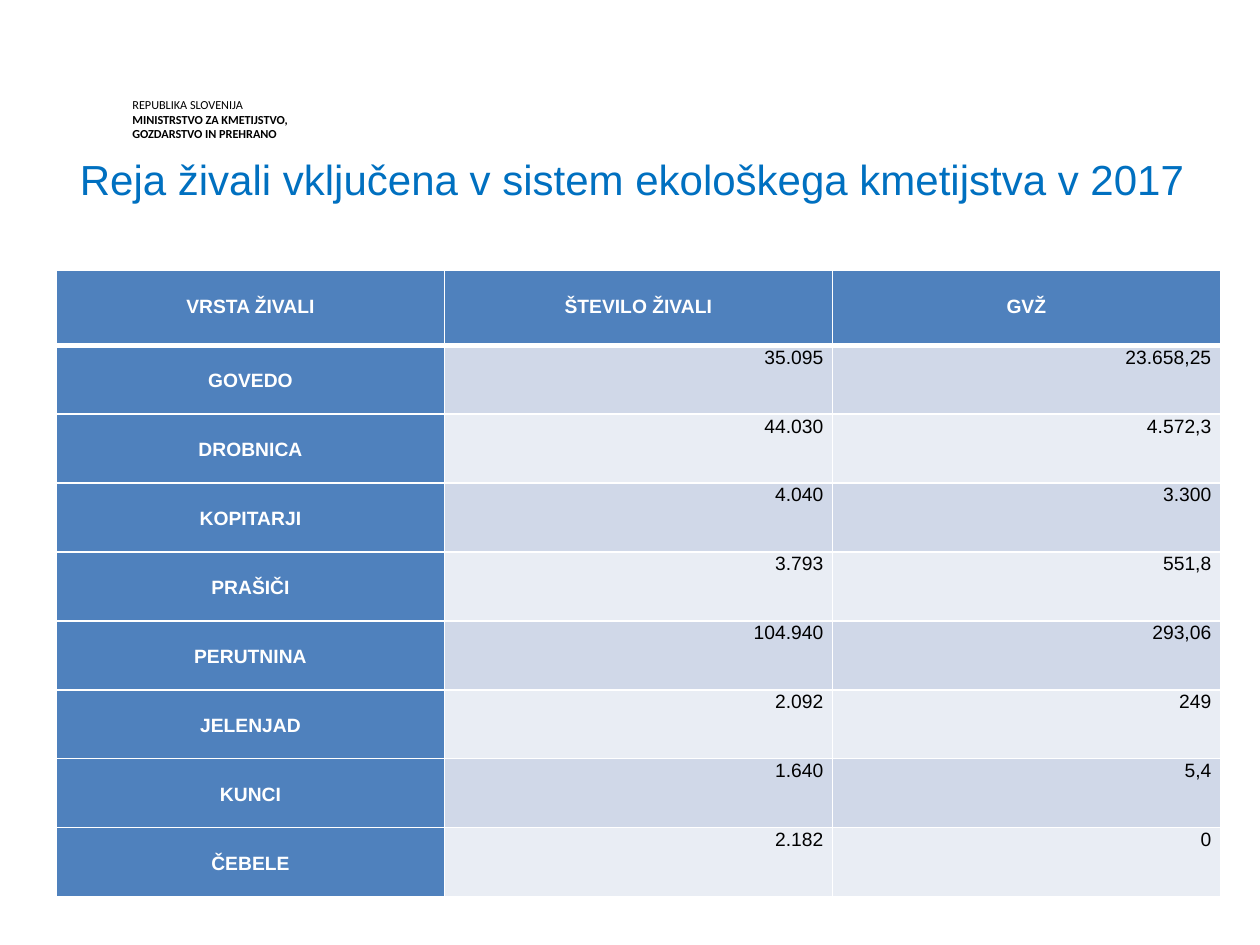
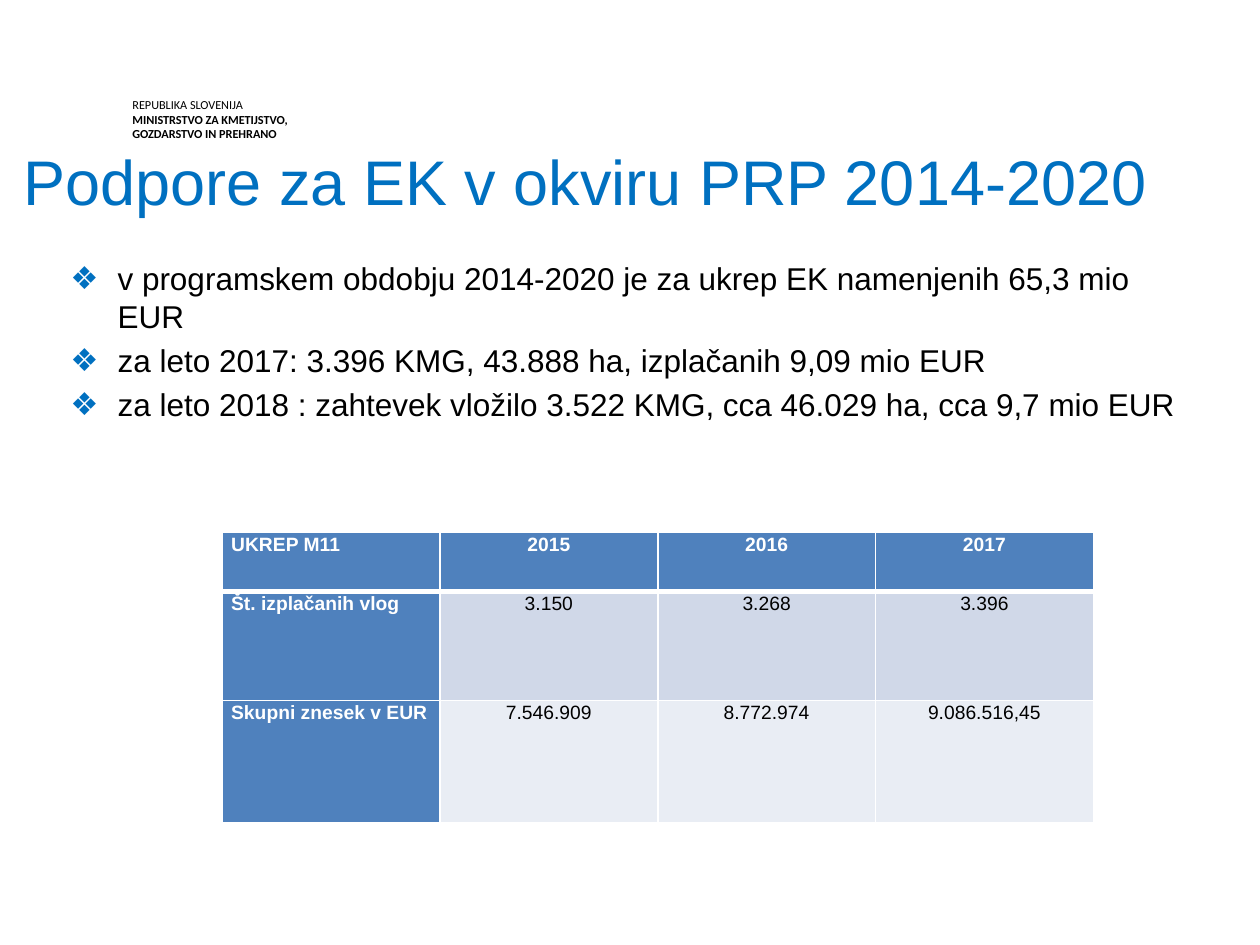
from dataclasses import dataclass

from lxml.etree import SubElement
from pptx import Presentation
from pptx.dml.color import RGBColor
from pptx.enum.text import MSO_ANCHOR, MSO_AUTO_SIZE, PP_ALIGN
from pptx.oxml.ns import qn
from pptx.util import Cm, Pt


@dataclass(frozen=True)
class Theme:
    blue: str = "0070C0"
    header: str = "4F81BD"
    bands: tuple = ("D0D8E8", "E9EDF4")
    white: str = "FFFFFF"
    black: str = "000000"
    font: str = "Arial"
    ministry_font: str = "Calibri"
    ministry_size: float = 7
    ministry_leading: float = 8.4
    body_size: float = 18
    table_size: float = 11
    table_leading: float = 1.07
    rule: float = 1
    header_rule: float = 3


TITLE_AND_CONTENT, TITLE_ONLY = 1, 5
MINISTRY = [
    ("REPUBLIKA SLOVENIJA", False),
    ("MINISTRSTVO ZA KMETIJSTVO,", True),
    ("GOZDARSTVO IN PREHRANO", True),
]


class Deck:
    def __init__(self, theme):
        self.theme = theme
        self.prs = Presentation()
        self.prs.slide_width, self.prs.slide_height = Cm(25.4), Cm(19.05)
        self.s = None

    def slide(self, layout):
        self.s = self.prs.slides.add_slide(self.prs.slide_layouts[layout])
        self.ministry()

    def run(self, p, text, size, color, bold=False, font=None):
        r = p.add_run()
        r.text = text
        r.font.name = font or self.theme.font
        r.font.size = Pt(size)
        r.font.bold = bold
        r.font.color.rgb = RGBColor.from_string(color)

    def frame(self, sp, box):
        """Place a shape and return its text frame, flush with the box and top aligned."""
        sp.left, sp.top, sp.width, sp.height = (Cm(v) for v in box)
        tf = sp.text_frame
        tf.margin_left = tf.margin_top = tf.margin_right = tf.margin_bottom = 0
        tf.vertical_anchor = MSO_ANCHOR.TOP
        tf.word_wrap = True
        tf.auto_size = MSO_AUTO_SIZE.NONE
        return tf

    def paragraphs(self, tf, items):
        for i, item in enumerate(items):
            yield (tf.add_paragraph() if i else tf.paragraphs[0]), item

    def ministry(self):
        t = self.theme
        tf = self.frame(self.s.shapes.add_textbox(0, 0, 0, 0), (2.67, 1.96, 3.73, 0.86))
        for p, (text, bold) in self.paragraphs(tf, MINISTRY):
            p.line_spacing = Pt(t.ministry_leading)
            self.run(p, text, t.ministry_size, t.black, bold, t.ministry_font)

    def title(self, text, size, box):
        p = self.frame(self.s.shapes.title, box).paragraphs[0]
        p.alignment = PP_ALIGN.LEFT
        self.run(p, text, size, self.theme.blue)

    def bullets(self, items, box, indent=0.95):
        t = self.theme
        tf = self.frame(self.s.placeholders[1], box)
        for p, text in self.paragraphs(tf, items):
            pPr = p._p.get_or_add_pPr()
            pPr.set("marL", str(Cm(indent)))
            pPr.set("indent", str(-Cm(indent)))
            p.space_before = Pt(0 if text is items[0] else 3.6)
            SubElement(SubElement(pPr, qn("a:buClr")), qn("a:srgbClr"), val=t.blue)
            SubElement(pPr, qn("a:buChar"), char="❖")
            self.run(p, text, t.body_size, t.black)

    def borders(self, cell, row):
        t = self.theme
        top = t.header_rule if row == 1 else t.rule
        bottom = t.header_rule if row == 0 else t.rule
        tcPr = cell._tc.get_or_add_tcPr()
        for side, width in zip("LRTB", (t.rule, t.rule, top, bottom)):
            ln = SubElement(tcPr, qn(f"a:ln{side}"), w=str(Pt(width)))
            SubElement(SubElement(ln, qn("a:solidFill")), qn("a:srgbClr"), val=t.white)

    def table(self, rows, left, top, col_width, heights, label_align, value_align, label_drop=0):
        """Draw a table; label_drop is the top margin of the header row and first column."""
        t = self.theme
        n = len(rows[0])
        tbl = self.s.shapes.add_table(len(rows), n, Cm(left), Cm(top),
                                      Cm(n * col_width), Cm(sum(heights))).table
        tbl.horz_banding = tbl.first_row = False
        for col in tbl.columns:
            col.width = Cm(col_width)
        for i, (values, height) in enumerate(zip(rows, heights)):
            tbl.rows[i].height = Cm(height)
            for j, text in enumerate(values):
                cell = tbl.cell(i, j)
                label = i == 0 or j == 0
                self.borders(cell, i)
                cell.fill.solid()
                fill = t.header if label else t.bands[(i - 1) % 2]
                cell.fill.fore_color.rgb = RGBColor.from_string(fill)
                cell.margin_left = cell.margin_right = Cm(0.18)
                cell.margin_top = Cm(label_drop if label else 0)
                cell.margin_bottom = 0
                p = cell.text_frame.paragraphs[0]
                p.line_spacing = t.table_leading
                if j == 0:
                    p.alignment = label_align
                else:
                    p.alignment = PP_ALIGN.CENTER if i == 0 else value_align
                self.run(p, text, t.table_size, t.white if label else t.black, label)


def livestock_slide(deck):
    deck.slide(TITLE_ONLY)
    deck.title("Reja živali vključena v sistem ekološkega kmetijstva v 2017", 24,
               (1.61, 3.1, 23.2, 2.06))
    animals = [
        ("VRSTA ŽIVALI", "ŠTEVILO ŽIVALI", "GVŽ"),
        ("GOVEDO", "35.095", "23.658,25"),
        ("DROBNICA", "44.030", "4.572,3"),
        ("KOPITARJI", "4.040", "3.300"),
        ("PRAŠIČI", "3.793", "551,8"),
        ("PERUTNINA", "104.940", "293,06"),
        ("JELENJAD", "2.092", "249"),
        ("KUNCI", "1.640", "5,4"),
        ("ČEBELE", "2.182", "0"),
    ]
    deck.table(animals, 1.14, 5.45, 7.82, [1.51] + [1.39] * 8,
               PP_ALIGN.CENTER, PP_ALIGN.RIGHT, label_drop=0.48)


def support_slide(deck):
    deck.slide(TITLE_AND_CONTENT)
    deck.title("Podpore za EK v okviru PRP 2014-2020", 36, (0.48, 2.87, 23.5, 1.55))
    deck.bullets([
        "v programskem obdobju 2014-2020 je za ukrep EK namenjenih 65,3 mio EUR",
        "za leto 2017: 3.396 KMG, 43.888 ha, izplačanih 9,09 mio EUR",
        "za leto 2018 : zahtevek vložilo 3.522 KMG, cca 46.029 ha, cca 9,7 mio EUR",
    ], (1.42, 5.23, 22.81, 11.07))
    payments = [
        ("UKREP M11", "2015", "2016", "2017"),
        ("Št. izplačanih vlog", "3.150", "3.268", "3.396"),
        ("Skupni znesek v EUR", "7.546.909", "8.772.974", "9.086.516,45"),
    ]
    deck.table(payments, 4.48, 10.73, 4.39, [1.19, 2.2, 2.46],
               PP_ALIGN.LEFT, PP_ALIGN.CENTER)


def main():
    deck = Deck(Theme())
    livestock_slide(deck)
    support_slide(deck)
    deck.prs.save("out.pptx")


if __name__ == "__main__":
    main()
